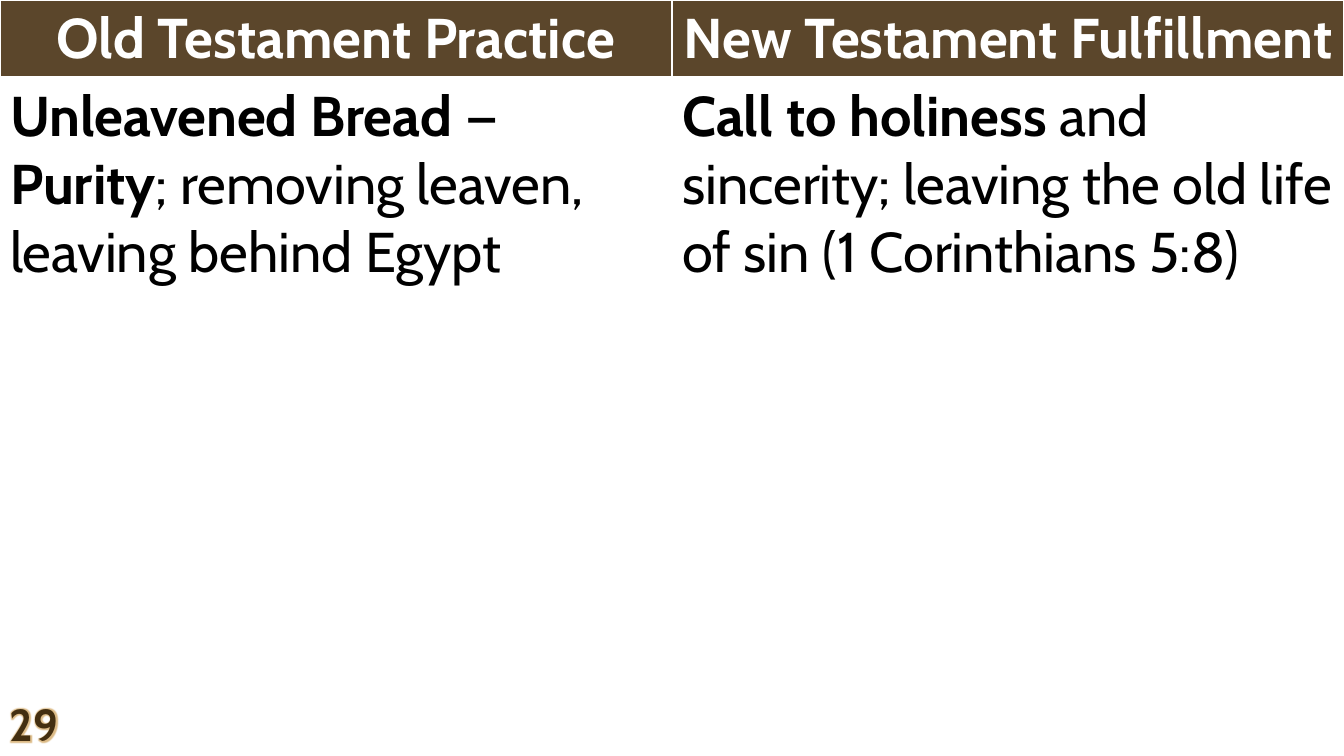
from lxml.etree import SubElement as Sub
from pptx import Presentation
from pptx.dml.color import RGBColor as RGB
from pptx.enum.text import MSO_ANCHOR as Anchor, PP_ALIGN as Align
from pptx.oxml import parse_xml
from pptx.oxml.ns import nsdecls, qn
from pptx.util import Inches, Pt

FONT = "Cabin"
WHITE = RGB(0xFF, 0xFF, 0xFF)
BLACK = RGB(0, 0, 0)
BROWN = RGB(0x5B, 0x46, 0x2B)
DARK = RGB(0x43, 0x2F, 0x11)
TAN = RGB(0xDD, 0xBC, 0x88)

HEADS = [
    [("Old Testament Practice", True)],
    [("New Testament Fulfillment", True)],
]
BODY = [
    [("Unleavened Bread ", True), ("— ", False), ("Purity", True),
     ("; removing leaven, leaving behind Egypt", False)],
    [("Call to holiness ", True),
     ("and sincerity; leaving the old life of sin (1 Corinthians 5:8)", False)],
]
NUMBER = "29"
WIDE, HIGH = Inches(13.33), Inches(7.5)
ROW = Inches(0.41)


def write(para, runs, size, color):
    """Add styled runs to a paragraph."""
    for text, bold in runs:
        run = para.add_run()
        run.text = text
        font = run.font
        font.name, font.size, font.bold = FONT, Pt(size), bold
        font.color.rgb = color


def edge(cell, widths):
    """Draw white borders of the given point widths around a cell."""
    props = cell._tc.get_or_add_tcPr()
    for spot, (side, width) in enumerate(zip("LRTB", widths)):
        line = parse_xml(f'<a:ln{side} {nsdecls("a")} w="{Pt(width)}"/>')
        fill = Sub(line, qn("a:solidFill"))
        Sub(fill, qn("a:srgbClr"), val=str(WHITE))
        props.insert(spot, line)


def grid(slide):
    """Build the two-column comparison table."""
    rows = [HEADS, BODY]
    table = slide.shapes.add_table(
        len(rows), len(HEADS), 0, 0, WIDE, ROW * len(rows)).table
    table.horz_banding = False
    for r, row in enumerate(rows):
        head = r == 0
        for c, runs in enumerate(row):
            cell = table.cell(r, c)
            if head:
                cell.fill.solid()
                cell.fill.fore_color.rgb = BROWN
            else:
                cell.fill.background()
            edge(cell, (1, 1, 1, 3) if head else (1, 1, 3, 1))
            para = cell.text_frame.paragraphs[0]
            para.alignment = Align.CENTER if head else Align.LEFT
            write(para, runs, 40, WHITE if head else BLACK)


def label(slide):
    """Place the glowing page number at the lower left."""
    high = HIGH // 10
    box = slide.shapes.add_textbox(0, HIGH - high, Inches(0.7), high)
    frame = box.text_frame
    frame.word_wrap = True
    frame.vertical_anchor = Anchor.BOTTOM
    para = frame.paragraphs[0]
    para.line_spacing = 0.9
    para.space_after = Pt(18)
    write(para, [(NUMBER, True)], 32, DARK)
    props = para.runs[0]._r.get_or_add_rPr()
    glow = parse_xml(
        f'<a:effectLst {nsdecls("a")}><a:glow rad="{Pt(4)}">'
        f'<a:srgbClr val="{TAN}"/></a:glow></a:effectLst>')
    props.find(qn("a:solidFill")).addnext(glow)


def main():
    """Build and save the slide."""
    deck = Presentation()
    deck.slide_width, deck.slide_height = WIDE, HIGH
    slide = deck.slides.add_slide(deck.slide_layouts[6])
    grid(slide)
    label(slide)
    deck.save("out.pptx")


if __name__ == "__main__":
    main()
